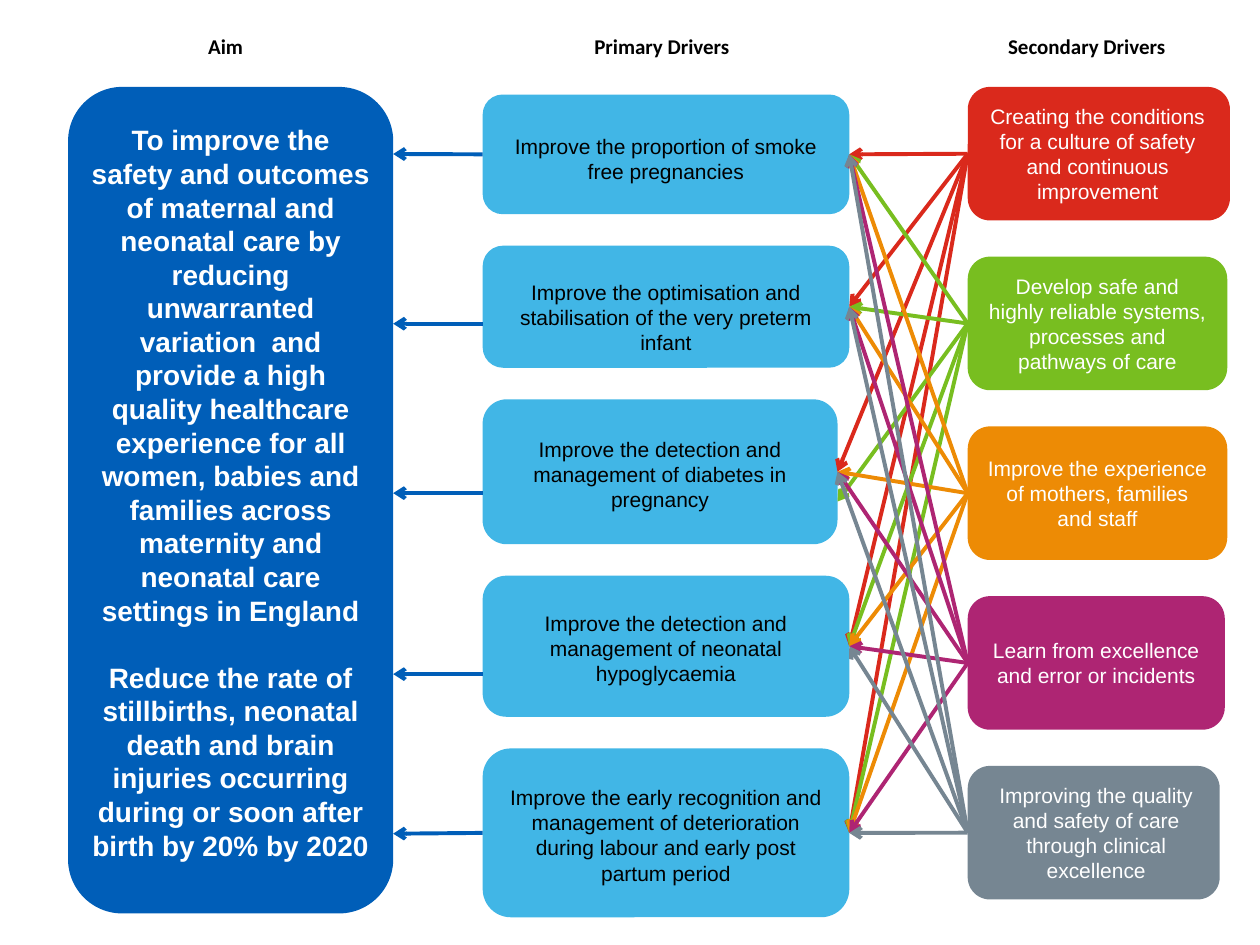
from lxml import etree
from pptx import Presentation
from pptx.dml.color import RGBColor
from pptx.enum.shapes import MSO_CONNECTOR, MSO_SHAPE
from pptx.enum.text import MSO_ANCHOR, PP_ALIGN
from pptx.oxml.ns import qn
from pptx.util import Pt

ROUNDED = MSO_SHAPE.ROUNDED_RECTANGLE
STRAIGHT = MSO_CONNECTOR.STRAIGHT
MIDDLE, TOP = MSO_ANCHOR.MIDDLE, MSO_ANCHOR.TOP
CENTER = PP_ALIGN.CENTER
LEFT_SIDE, RIGHT_SIDE = 1, 3

BLUE, SKY, WHITE, BLACK = "005EB8", "41B6E6", "FFFFFF", "000000"

# Content: headings as text, left, width
HEADINGS = [
    ("Aim", 61.2, 135.4),
    ("Primary Drivers", 329, 98.6),
    ("Secondary Drivers", 558, 126),
]
AIM = [
    "To improve the safety and outcomes of maternal and neonatal care by reducing "
    "unwarranted variation  and provide a high quality healthcare experience for all "
    "women, babies and families across maternity and neonatal care settings in England",
    "Reduce the rate of stillbirths, neonatal death and brain injuries occurring "
    "during or soon after birth by 20% by 2020",
]
# Primary drivers: text, top, width, height, downward shift of the text
PRIMARY = [
    ("Improve the proportion of smoke free pregnancies", 54, 209.5, 68.4, 2.4),
    ("Improve the optimisation and stabilisation of the very preterm infant",
     140.4, 209.5, 69.8, 6),
    ("Improve the detection and management of diabetes in pregnancy",
     228.2, 202.8, 82.8, 1.2),
    ("Improve the detection and management of neonatal hypoglycaemia",
     329, 209.5, 80.6, 1.2),
    ("Improve the early recognition and management of deterioration during labour "
     "and early post partum period", 427.7, 209.5, 96.5, 1.2),
]
# Secondary drivers: text, colour, width, left inset, right inset
SECONDARY = [
    ("Creating the conditions for a culture of safety and continuous improvement",
     "DA291C", 149.8, 5.8, 7.2),
    ("Develop safe and\nhighly reliable systems, processes and\npathways of care",
     "78BE20", 148.3, 7.2, 7.2),
    ("Improve the experience of mothers, families and staff",
     "ED8B05", 148.3, 7.2, 7.2),
    ("Learn from excellence and error or incidents", "AE2573", 146.9, 7.2, 7.2),
    ("Improving the quality and safety of care through clinical excellence",
     "768692", 144, 5.8, 2.9),
]
AIM_ARROW_ROWS = [88, 185, 281.8, 385.2, 476.4]
LOWERED_ENDS = {(1, 2): 286.6}  # (secondary, primary): arrow end below the middle

AIM_LEFT, AIM_TOP, AIM_WIDTH, AIM_HEIGHT = 38.9, 49.7, 185.8, 472.3
PRIMARY_LEFT = 275.8
SECONDARY_LEFT, SECONDARY_TOP, SECONDARY_HEIGHT, SECONDARY_STEP = 553, 49.7, 76.3, 97


def rgb(value):
    return RGBColor.from_string(value)


def write(shape, paragraphs, size, font, color, bold=False, anchor=MIDDLE,
          insets=(7.2, 3.6, 7.2, 3.6), gap=0):
    frame = shape.text_frame
    frame.word_wrap = True
    frame.vertical_anchor = anchor
    (frame.margin_left, frame.margin_top,
     frame.margin_right, frame.margin_bottom) = map(Pt, insets)
    for index, text in enumerate(paragraphs):
        paragraph = frame.add_paragraph() if index else frame.paragraphs[0]
        paragraph.alignment = CENTER
        if index:
            paragraph.space_before = Pt(gap)
        for number, line in enumerate(text.split("\n")):
            if number:
                paragraph.add_line_break()
            run = paragraph.add_run()
            run.text = line
            run.font.size, run.font.name, run.font.bold = Pt(size), font, bold
            run.font.color.rgb = rgb(color)


def add_box(slide, left, top, width, height, fill):
    shape = slide.shapes.add_shape(ROUNDED, Pt(left), Pt(top), Pt(width), Pt(height))
    shape.shadow.inherit = False
    shape.fill.solid()
    shape.fill.fore_color.rgb = rgb(fill)
    shape.line.fill.background()
    return shape


def add_arrow(slide, start, end, color):
    arrow = slide.shapes.add_connector(STRAIGHT, *start, *end)
    arrow.line.color.rgb = rgb(color)
    arrow.line.width = Pt(2.25)
    etree.SubElement(arrow.line._get_or_add_ln(), qn("a:tailEnd"), type="arrow")
    etree.SubElement(arrow._element.spPr, qn("a:effectLst"))
    return arrow


def middle(shape):
    return shape.top + shape.height // 2


def main():
    presentation = Presentation()
    presentation.slide_width, presentation.slide_height = Pt(720), Pt(540)
    slide = presentation.slides.add_slide(presentation.slide_layouts[6])

    # Column headings
    for text, left, width in HEADINGS:
        heading = slide.shapes.add_textbox(Pt(left), Pt(15.8), Pt(width), Pt(21.8))
        write(heading, [text], 12, "Calibri", BLACK, bold=True, anchor=TOP)

    # Aim
    aim = add_box(slide, AIM_LEFT, AIM_TOP, AIM_WIDTH, AIM_HEIGHT, BLUE)
    write(aim, AIM, 16, "Arial", WHITE, bold=True, insets=(2, 0, 2, 9), gap=19.2)

    # Primary drivers
    primary_boxes = []
    for text, top, width, height, shift in PRIMARY:
        box = add_box(slide, PRIMARY_LEFT, top, width, height, SKY)
        write(box, [text], 12, "Arial", BLACK, insets=(7.2, 3.6 + 2 * shift, 7.2, 3.6))
        primary_boxes.append(box)

    # Secondary drivers
    secondary_boxes = []
    for row, (text, color, width, inset_left, inset_right) in enumerate(SECONDARY):
        box = add_box(slide, SECONDARY_LEFT, SECONDARY_TOP + row * SECONDARY_STEP,
                      width, SECONDARY_HEIGHT, color)
        write(box, [text], 12, "Arial", WHITE, insets=(inset_left, 3.6, inset_right, 3.6))
        secondary_boxes.append(box)

    # Arrows from primary drivers to the aim, joined where they leave a side's middle
    for box, row in zip(primary_boxes, AIM_ARROW_ROWS):
        arrow = add_arrow(slide, (box.left, Pt(row)), (aim.left + aim.width, Pt(row)), BLUE)
        if abs(middle(box) - Pt(row)) < Pt(0.5):
            arrow.begin_connect(box, LEFT_SIDE)

    # Arrows from every secondary driver to every primary driver
    for source, secondary in enumerate(secondary_boxes):
        for target, primary in enumerate(primary_boxes):
            lowered = LOWERED_ENDS.get((source, target))
            end_row = Pt(lowered) if lowered else middle(primary)
            arrow = add_arrow(slide, (secondary.left, middle(secondary)),
                              (primary.left + primary.width, end_row), SECONDARY[source][1])
            arrow.begin_connect(secondary, LEFT_SIDE)
            if not lowered:
                arrow.end_connect(primary, RIGHT_SIDE)

    presentation.save("out.pptx")


if __name__ == "__main__":
    main()
